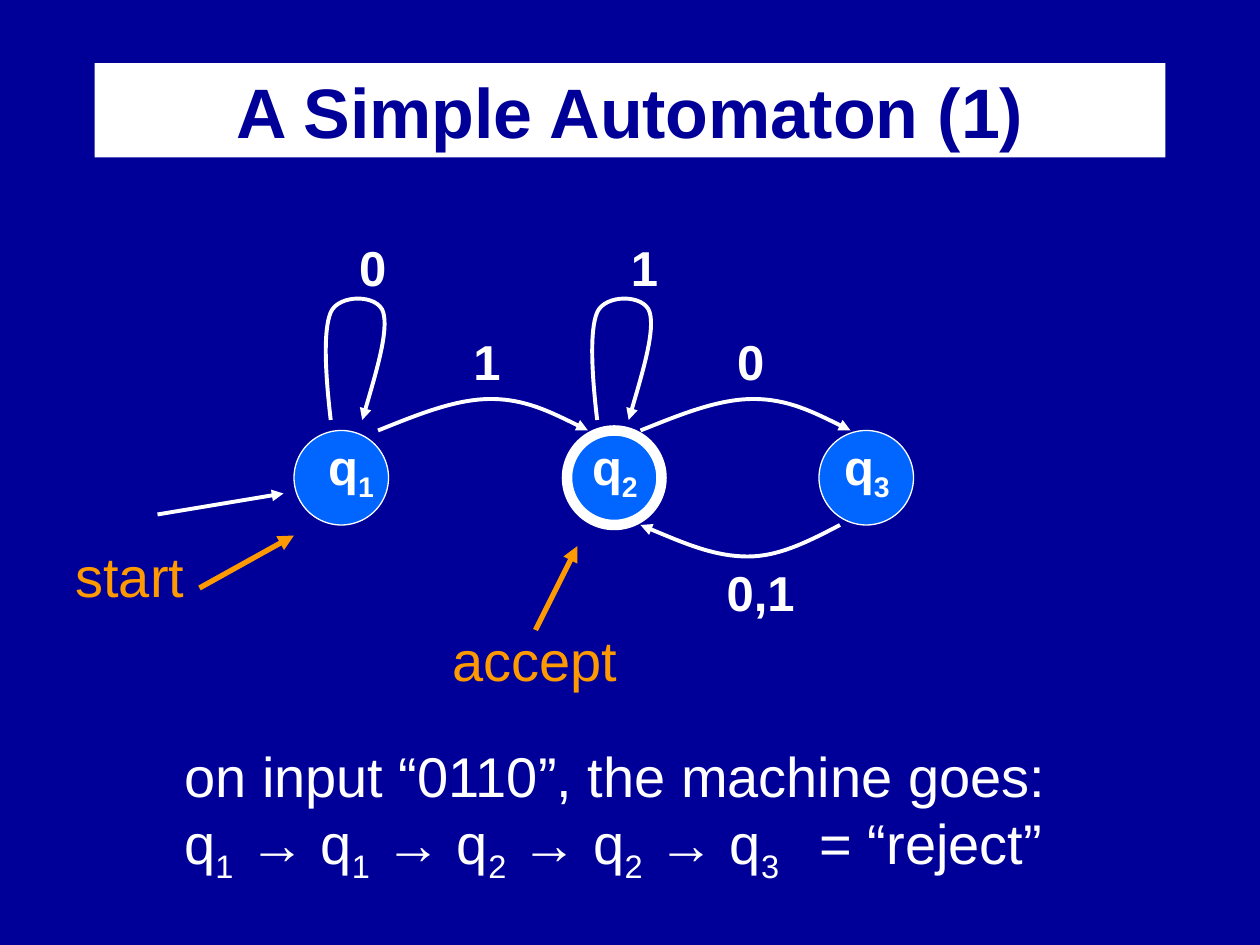
"""Build the slide of a three-state automaton."""
from lxml.etree import SubElement
from pptx import Presentation
from pptx.dml.color import RGBColor
from pptx.enum.shapes import MSO_CONNECTOR, MSO_SHAPE
from pptx.enum.text import MSO_ANCHOR, MSO_AUTO_SIZE, PP_ALIGN
from pptx.oxml.ns import qn
from pptx.util import Pt

SCALE = 9525
NAVY, BLUE, WHITE, GOLD = "000099", "0066FF", "FFFFFF", "FF9900"


def px(*nums):
    return [round(n * SCALE) for n in nums]


def hue(code):
    return RGBColor.from_string(code)


def write(frame, text, size=28, color=WHITE, bold=False, align=None, tab=None):
    """Fill a frame; an underscore lowers the next character."""
    for row, line in enumerate(text.split("\n")):
        para = frame.add_paragraph() if row else frame.paragraphs[0]
        para.alignment = align
        if tab and "\t" in line:
            stops = SubElement(para._p.get_or_add_pPr(), qn("a:tabLst"))
            SubElement(stops, qn("a:tab"), pos=str(px(tab)[0]), algn="l")
        head, *rest = line.split("_")
        parts = [(head, False)]
        for part in rest:
            parts += [(part[0], True), (part[1:], False)]
        for part, low in parts:
            if not part:
                continue
            run = para.add_run()
            run.text = part
            font = run.font
            font.name, font.size, font.bold = "Arial", Pt(size), bold
            font.color.rgb = hue(color)
            if low:
                run._r.get_or_add_rPr().set("baseline", "-25000")


class Board:
    """Hold the slide and draw each kind of element in one style."""

    def __init__(self, deck):
        self.slide = deck.slides.add_slide(deck.slide_layouts[5])
        self.slide.background.fill.solid()
        self.slide.background.fill.fore_color.rgb = hue(NAVY)
        self.shapes = self.slide.shapes

    def group(self):
        self.shapes = self.slide.shapes.add_group_shape().shapes

    def top(self):
        self.shapes = self.slide.shapes

    def title(self, text, *box):
        shape = self.slide.shapes.title
        shape.left, shape.top, shape.width, shape.height = px(*box)
        shape.fill.solid()
        shape.fill.fore_color.rgb = hue(WHITE)
        shape.text_frame.vertical_anchor = MSO_ANCHOR.MIDDLE
        write(shape.text_frame, text, size=40, color=NAVY, bold=True,
              align=PP_ALIGN.CENTER)

    def text(self, text, *box, **form):
        frame = self.shapes.add_textbox(*px(*box)).text_frame
        frame.word_wrap = False
        frame.auto_size = MSO_AUTO_SIZE.SHAPE_TO_FIT_TEXT
        write(frame, text, **form)

    def label(self, text, x, y, wide=40):
        self.text(text, x, y, wide, 55, bold=True, align=PP_ALIGN.CENTER)

    def state(self, text, x, shift, edge=0.75):
        shape = self.shapes.add_shape(MSO_SHAPE.OVAL, *px(x, 328, 72, 72))
        shape.shadow.inherit = False
        shape.fill.solid()
        shape.fill.fore_color.rgb = hue(BLUE)
        shape.line.color.rgb = hue(WHITE)
        shape.line.width = Pt(edge)
        self.label(text, x + shift, 328, 57)

    def tip(self, shape, color, width, end="tailEnd"):
        shape.line.color.rgb = hue(color)
        shape.line.width = Pt(width)
        line = shape._element.spPr.find(qn("a:ln"))
        SubElement(line, qn("a:" + end), type="triangle")

    def arrow(self, *ends, color=WHITE, width=2.25):
        line = self.shapes.add_connector(MSO_CONNECTOR.STRAIGHT, *px(*ends))
        self.tip(line, color, width)
        SubElement(line._element.spPr, qn("a:effectLst"))

    def curve(self, points, end="tailEnd"):
        """Draw a start point and triples of Bezier points."""
        pen = self.shapes.build_freeform(*points[0], scale=SCALE)
        pen.add_line_segments(points[1:], close=False)
        shape = pen.convert_to_shape()
        path = next(shape._element.iter(qn("a:path")))
        steps = path.findall(qn("a:lnTo"))
        for i in range(0, len(steps), 3):
            bend = SubElement(path, qn("a:cubicBezTo"))
            for step in steps[i:i + 3]:
                bend.append(step[0])
                path.remove(step)
        shape.shadow.inherit = False
        shape.fill.background()
        self.tip(shape, WHITE, 2.25, end)

    def arc(self, x, y, wide, rise, end="tailEnd"):
        bend = [(0, 0), (0.19, 0.5), (0.37, 1), (0.54, 1), (0.7, 1),
                (0.85, 0.5), (1, 0)]
        self.curve([(round(x + u * wide), round(y + v * rise))
                    for u, v in bend], end)

    def loop(self, x):
        bend = [(0, 96), (-4, 62), (-6, 28), (0, 14), (6, 0), (36, 0),
                (40, 14), (44, 28), (34, 62), (24, 96)]
        self.curve([(x + u, 224 + v) for u, v in bend])


def main():
    deck = Presentation()
    deck.slide_width, deck.slide_height = px(960, 720)
    board = Board(deck)
    board.title("A Simple Automaton (1)", 72, 48, 816, 72)

    board.group()
    board.state("q_1", 224, 15)
    board.state("q_2", 432, 8, edge=6)
    board.state("q_3", 624, 8)
    board.arc(288, 328, 160, -24)
    board.label("1", 351, 248)
    board.arc(488, 328, 160, -24)
    board.label("0", 552, 248)
    board.arc(488, 400, 152, 24, end="headEnd")
    board.label("0,1", 544, 424, 71)
    board.loop(252)
    board.label("0", 264, 176)
    board.loop(455)
    board.label("1", 471, 176)
    board.arrow(120, 392, 216, 376)

    board.top()
    board.text("on input “0110”, the machine goes:\n"
               "q_1 → q_1 → q_2 → q_2 → q_3\t= “reject”",
               131, 560, 680, 112, size=32, tab=484)

    board.group()
    board.text("start", 48, 408, 102, 60, size=32, color=GOLD)
    board.text("accept", 335, 472, 145, 60, size=32, color=GOLD)
    for ends in [(408, 480, 440, 416), (152, 448, 224, 408)]:
        board.arrow(*ends, color=GOLD, width=3)
    deck.save("out.pptx")


if __name__ == "__main__":
    main()
